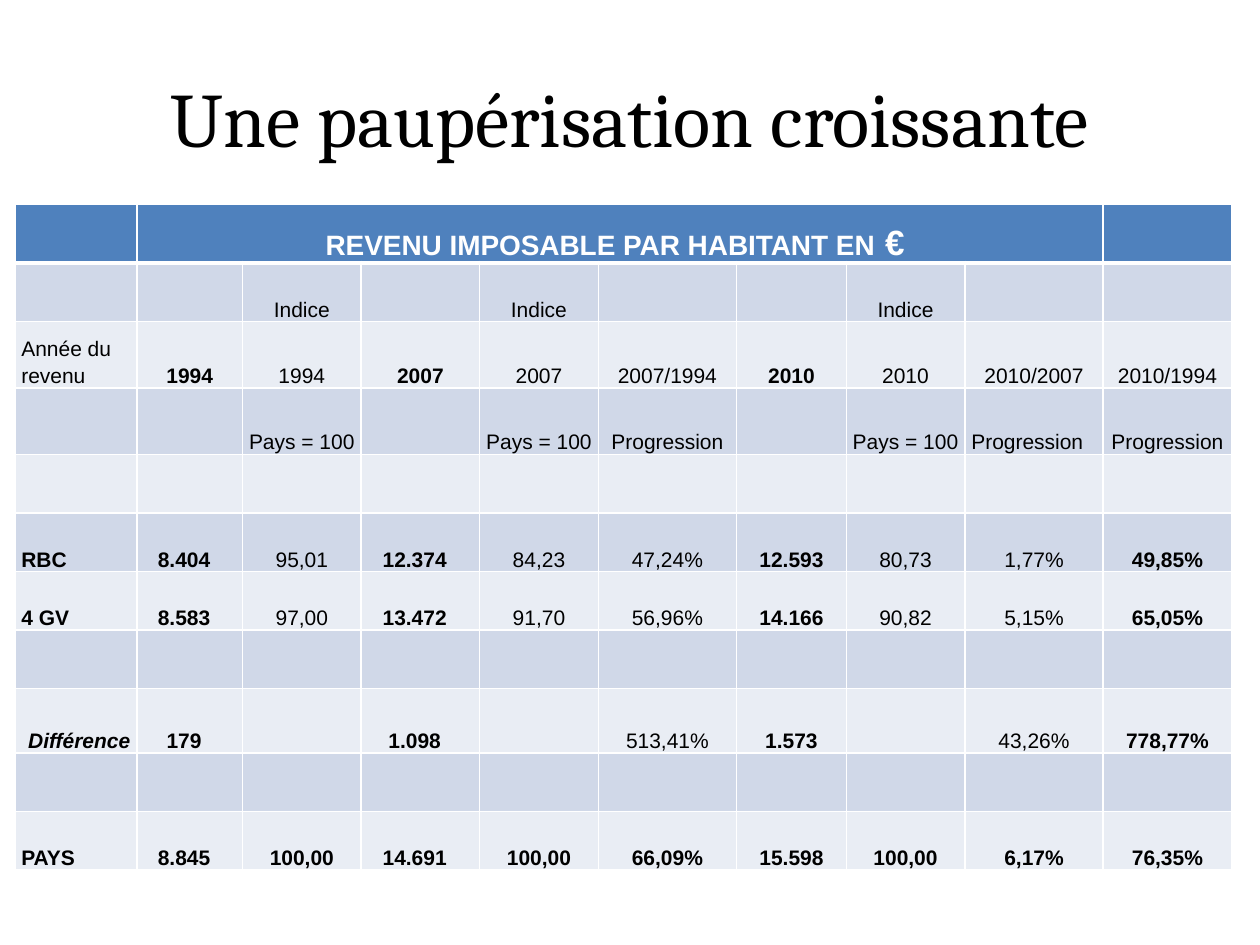
from lxml import etree
from pptx import Presentation
from pptx.dml.color import RGBColor
from pptx.enum import text
from pptx.oxml.ns import qn
from pptx.util import Cm, Pt

HEADER, BAND_DARK, BAND_LIGHT = "4F81BD", "D0D8E8", "E9EDF4"
WHITE, BLACK = "FFFFFF", "000000"
LEFT, CENTER, RIGHT = text.PP_ALIGN.LEFT, text.PP_ALIGN.CENTER, text.PP_ALIGN.RIGHT

COL_WIDTHS = [2.46, 2.13, 2.39, 2.39, 2.39, 2.79, 2.21, 2.39, 2.79, 2.59]
ROW_HEIGHTS = [1.18, 1.18, 1.34, 1.34, 1.18, 1.18, 1.18, 1.18, 1.3, 1.18, 1.18]
FIRST_DATA_ROW = 5
DIFFERENCE_ROW = 8
TOTAL_ROW = 10
INCOME_COLS = {1, 3, 6}
OFFSET_COLS = {1, 3}
LEFT_CELLS = {(3, 2), (3, 7), (3, 8)}

EMPTY = [""] * 10
ROWS = [
    EMPTY,
    ["", "", "Indice", "", "Indice", "", "", "Indice", "", ""],
    ["Année du revenu", "1994", "1994", "2007", "2007", "2007/1994",
     "2010", "2010", "2010/2007", "2010/1994"],
    ["", "", "Pays = 100", "", "Pays = 100", "Progression",
     "", "Pays = 100", "Progression", "Progression"],
    EMPTY,
    ["RBC", "8.404", "95,01", "12.374", "84,23", "47,24%",
     "12.593", "80,73", "1,77%", "49,85%"],
    ["4 GV", "8.583", "97,00", "13.472", "91,70", "56,96%",
     "14.166", "90,82", "5,15%", "65,05%"],
    EMPTY,
    ["Différence", "179", "", "1.098", "", "513,41%",
     "1.573", "", "43,26%", "778,77%"],
    EMPTY,
    ["PAYS", "8.845", "100,00", "14.691", "100,00", "66,09%",
     "15.598", "100,00", "6,17%", "76,35%"],
]


def rgb(color):
    return RGBColor.from_string(color)


def format_run(r, font, size, color, bold=False, italic=False):
    r.font.name, r.font.size = font, Pt(size)
    r.font.color.rgb = rgb(color)
    r.font.bold, r.font.italic = bold, italic


def style_cell(cell, fill, bottom_width=1):
    """Give a cell white borders and a solid fill."""
    tc_pr = cell._tc.get_or_add_tcPr()
    for side, width in (("L", 1), ("R", 1), ("T", 1), ("B", bottom_width)):
        ln = etree.SubElement(tc_pr, qn("a:ln" + side), w=str(Pt(width)))
        solid = etree.SubElement(ln, qn("a:solidFill"))
        etree.SubElement(solid, qn("a:srgbClr"), val=WHITE)
    cell.fill.solid()
    cell.fill.fore_color.rgb = rgb(fill)


def place_text(cell, align):
    """Sit the cell text on the bottom edge and return its paragraph."""
    cell.vertical_anchor = text.MSO_ANCHOR.BOTTOM
    cell.margin_left = cell.margin_right = Cm(0.13)
    cell.margin_top = cell.margin_bottom = 0
    p = cell.text_frame.paragraphs[0]
    p.alignment, p.line_spacing = align, 1.15
    return p


def fill_header(table):
    cell = table.cell(0, 1)
    cell.merge(table.cell(0, 8))
    p = place_text(cell, CENTER)
    cell.margin_right = Cm(0.33)
    for words, size in (("REVENU IMPOSABLE PAR HABITANT EN", 16), (" €", 20)):
        r = p.add_run()
        r.text = words
        format_run(r, "Arial", size, WHITE, bold=True)


def fill_body_cell(cell, row, col, words):
    is_data = row >= FIRST_DATA_ROW
    is_difference = row == DIFFERENCE_ROW and col == 0
    if is_difference:
        align = RIGHT
    elif col == 0 or (row, col) in LEFT_CELLS:
        align = LEFT
    else:
        align = CENTER
    p = place_text(cell, align)
    if is_data and col in OFFSET_COLS:
        cell.margin_right = Cm(0.36)
    p.text = words
    bold = col in INCOME_COLS or row == TOTAL_ROW or (is_data and col in (0, 9))
    format_run(p.runs[0], "Arial", 12, BLACK, bold, is_difference)


def add_income_table(s, left, top):
    frame = s.shapes.add_table(len(ROWS), len(COL_WIDTHS), Cm(left), Cm(top),
                               Cm(sum(COL_WIDTHS)), Cm(sum(ROW_HEIGHTS)))
    table = frame.table
    for column, width in zip(table.columns, COL_WIDTHS):
        column.width = Cm(width)
    for row, height in enumerate(ROW_HEIGHTS):
        table.rows[row].height = Cm(height)
        band = BAND_DARK if row % 2 else BAND_LIGHT
        for col, words in enumerate(ROWS[row]):
            cell = table.cell(row, col)
            style_cell(cell, band if row else HEADER, 1 if row else 3)
            if words:
                fill_body_cell(cell, row, col, words)
    fill_header(table)


def set_title(s, left, top, width, height):
    title = s.shapes.title
    title.left, title.top = Cm(left), Cm(top)
    title.width, title.height = Cm(width), Cm(height)
    tf = title.text_frame
    tf.text = "Une paupérisation croissante"
    tf.vertical_anchor = text.MSO_ANCHOR.MIDDLE
    p = tf.paragraphs[0]
    p.alignment = CENTER
    format_run(p.runs[0], "Cambria", 44, BLACK)


def main():
    prs = Presentation()
    prs.slide_width, prs.slide_height = Cm(25.4), Cm(19.05)
    s = prs.slides.add_slide(prs.slide_layouts[5])
    set_title(s, 1.27, 0.76, 22.86, 3.18)
    add_income_table(s, 0.3, 4.12)
    prs.save("out.pptx")


if __name__ == "__main__":
    main()
